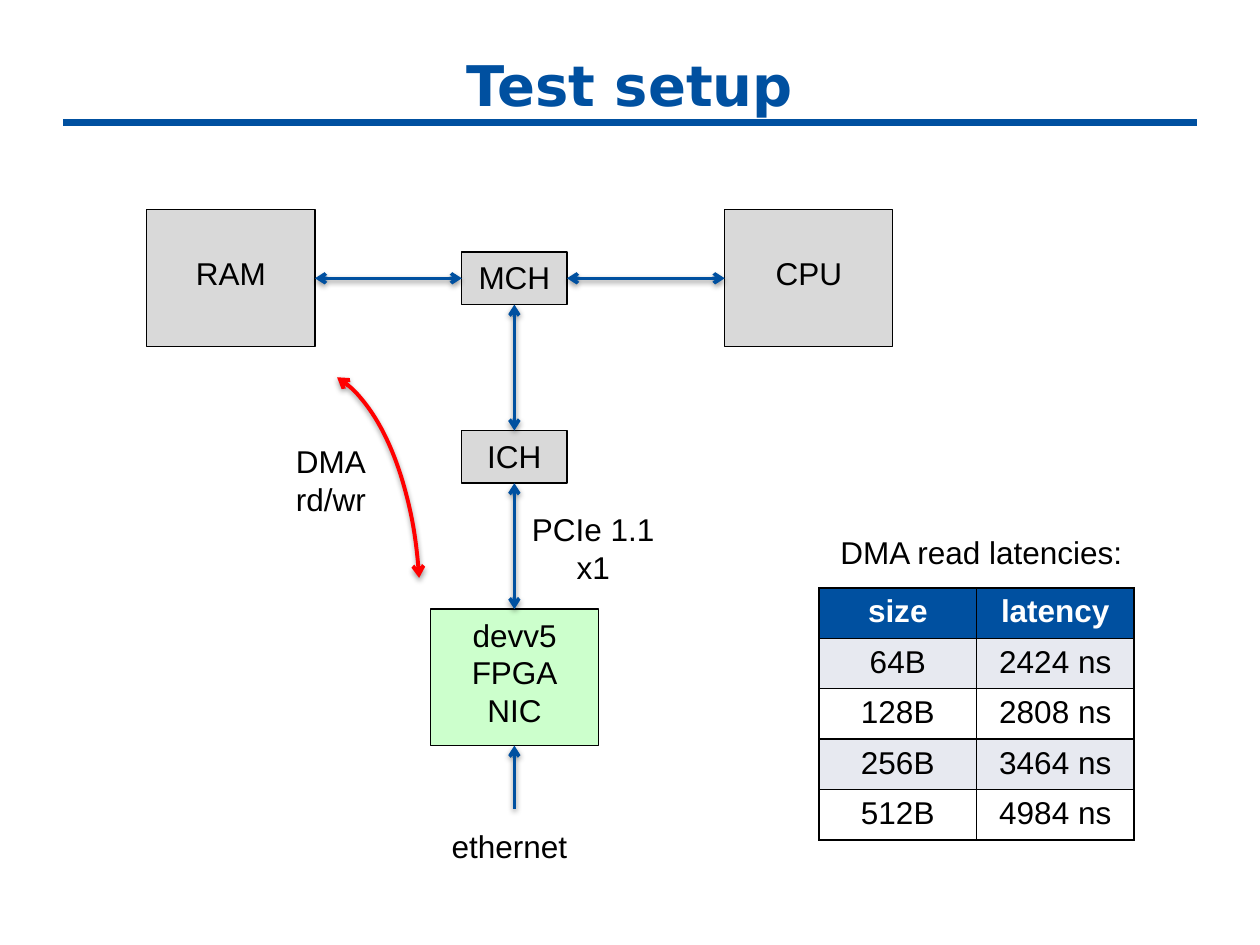
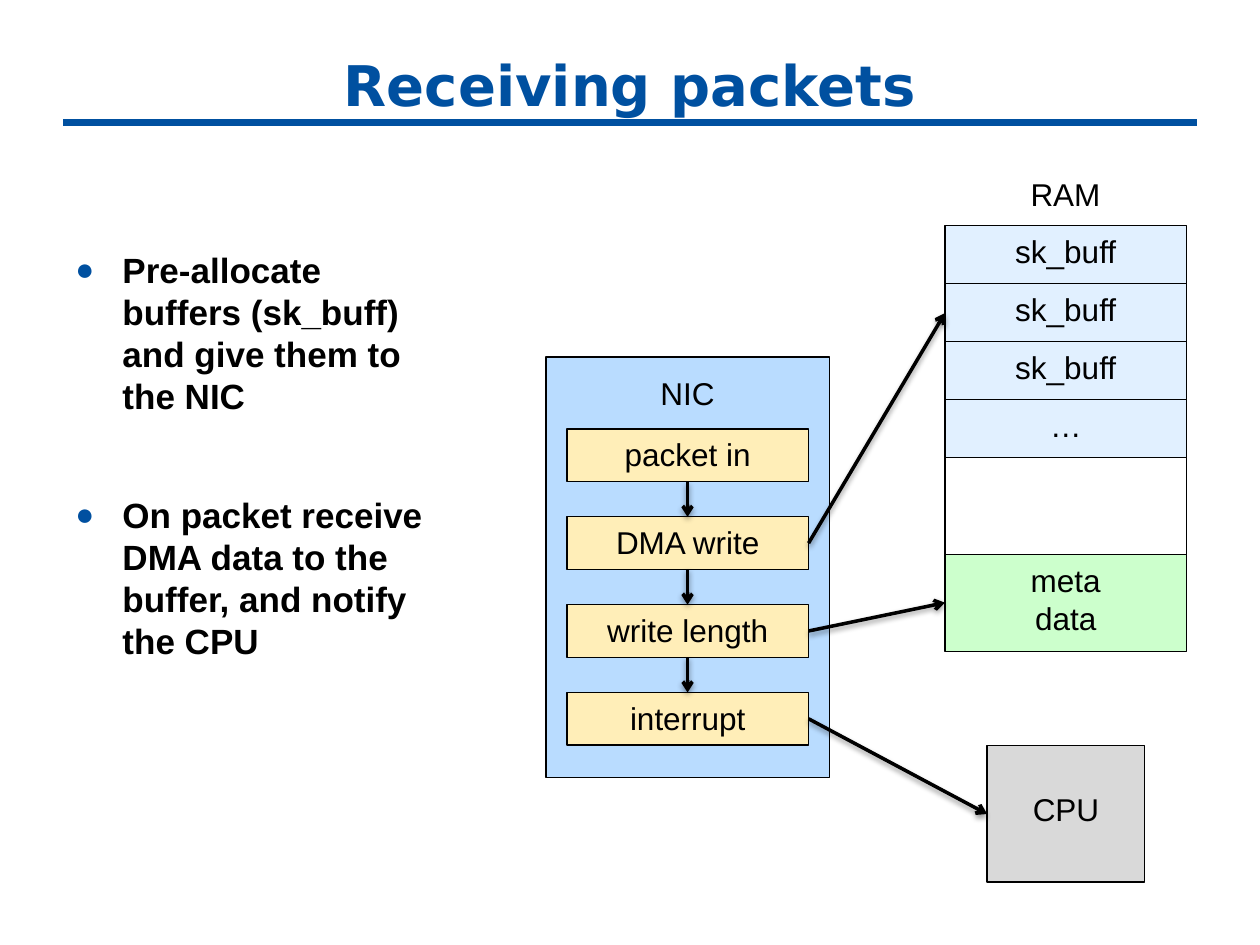
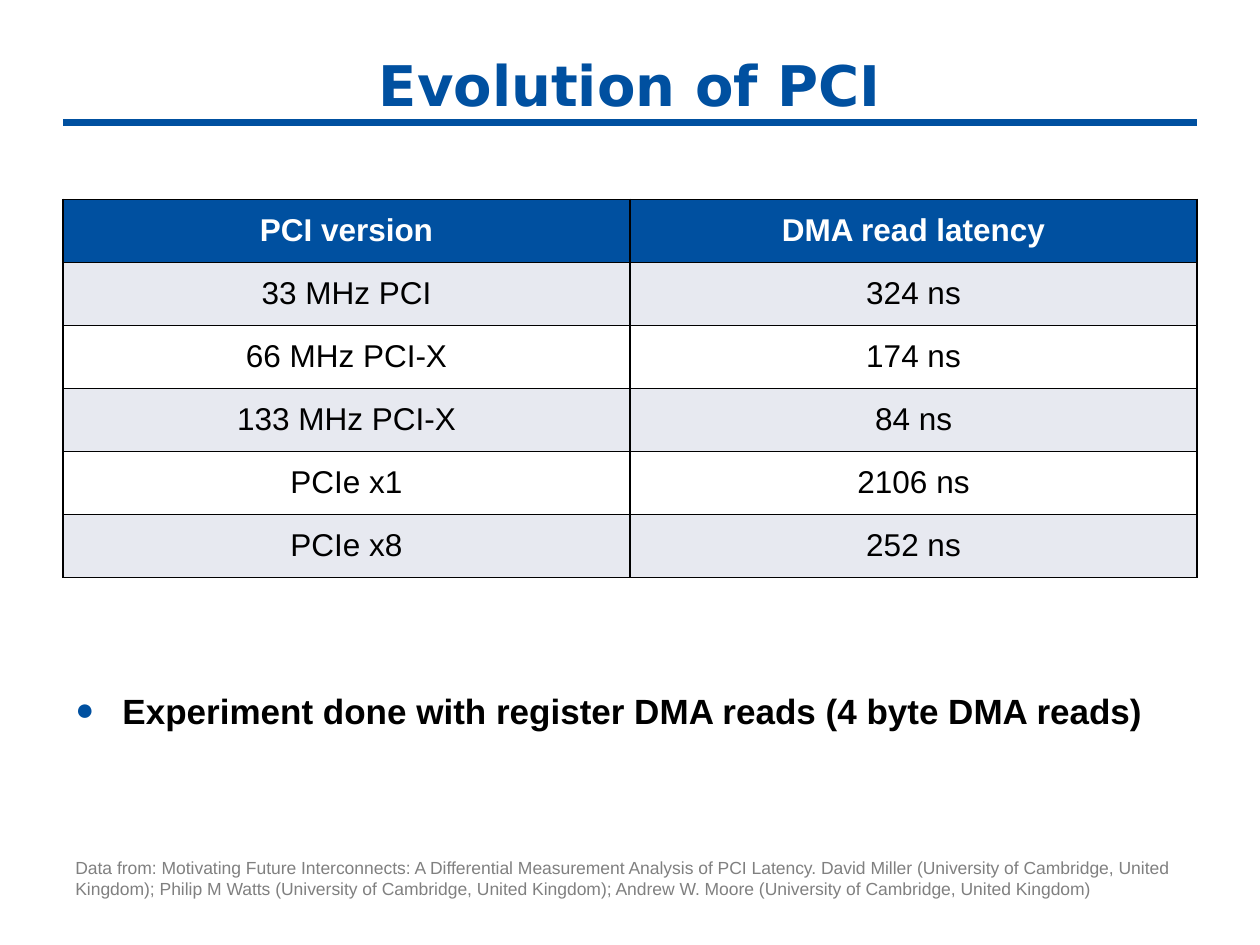
from lxml import etree
from pptx import Presentation
from pptx.dml.color import RGBColor
from pptx.enum.shapes import MSO_CONNECTOR, MSO_SHAPE
from pptx.enum.text import MSO_ANCHOR, MSO_AUTO_SIZE, PP_ALIGN
from pptx.oxml import parse_xml
from pptx.oxml.ns import nsdecls, qn
from pptx.util import Cm, Pt

RECT, ARC, LINE = MSO_SHAPE.RECTANGLE, MSO_SHAPE.ARC, MSO_CONNECTOR.STRAIGHT
LEFT, MID = PP_ALIGN.LEFT, PP_ALIGN.CENTER
TOP, HALF = MSO_ANCHOR.TOP, MSO_ANCHOR.MIDDLE
FIXED = MSO_AUTO_SIZE.NONE
color = RGBColor.from_string
BLUE, BLACK, WHITE, RED = "0050A0", "000000", "FFFFFF", "FF0000"
GRAY, GREEN, PALE, SKY, SAND = "D9D9D9", "CCFFCC", "E1F0FF", "B9DCFF", "FFEEB8"
BAND, DIM = "E7E9F0", "808080"
FONT, HEAD = "Arial", "DejaVu Sans"
SHADE = (
    f'<a:effectLst {nsdecls("a")}><a:outerShdw blurRad="40000" dist="20000" dir="5400000" '
    'rotWithShape="0"><a:srgbClr val="000000"><a:alpha val="38000"/></a:srgbClr>'
    '</a:outerShdw></a:effectLst>'
)


def box(page, text, x, y, w, h, fill=None, top=0.13):
    place = Cm(x), Cm(y), Cm(w), Cm(h)
    if fill:
        part = page.shapes.add_shape(RECT, *place)
        part.shadow.inherit = False
        part.fill.solid()
        part.fill.fore_color.rgb = color(fill)
        part.line.color.rgb = color(BLACK)
        part.line.width = Pt(0.75)
    else:
        part = page.shapes.add_textbox(*place)
    frame = part.text_frame
    frame.word_wrap = True
    frame.vertical_anchor = TOP
    frame.margin_top = Cm(top)
    frame.text = text
    for para in frame.paragraphs:
        para.alignment = MID
        para.font.name = FONT
        para.font.size = Pt(18)
        para.font.color.rgb = color(BLACK)
    return part


def point(part, tone, ends, width=2):
    part.line.color.rgb = color(tone)
    part.line.width = Pt(width)
    props = part.element.spPr
    for end in ends:
        etree.SubElement(props.find(qn("a:ln")), qn(f"a:{end}"), type="arrow")
    props.append(parse_xml(SHADE))


deck = Presentation()
deck.slide_width, deck.slide_height = Cm(25.4), Cm(19.05)
plain = deck.slide_layouts[5]

pages = []
for name in ("Test setup", "Receiving packets", "Evolution of PCI"):
    page = deck.slides.add_slide(plain)
    title = page.shapes.title
    title.left, title.top, title.width, title.height = Cm(1.27), Cm(0.85), Cm(22.86), Cm(1.69)
    frame = title.text_frame
    frame.text = name
    frame.auto_size = FIXED
    frame.vertical_anchor = HALF
    para = frame.paragraphs[0]
    para.alignment = MID
    para.font.name = HEAD
    para.font.size = Pt(32)
    para.font.bold = True
    para.font.color.rgb = color(BLUE)
    pages.append(page)
setup, flow, trend = pages

rule = setup.shapes.add_connector(LINE, Cm(1.27), Cm(2.47), Cm(24.13), Cm(2.47))
rule.line.color.rgb = color(BLUE)
rule.line.width = Pt(4)
etree.SubElement(rule.element.spPr, qn("a:effectLst"))
plain.shapes.element.append(rule.element)

box(setup, "devv5\nFPGA\nNIC", 8.68, 12.28, 3.39, 2.75, GREEN)
for name, y in (("ICH", 8.68), ("MCH", 5.08)):
    box(setup, name, 9.31, y, 2.12, 1.06, GRAY)
for name, x in (("CPU", 14.61), ("RAM", 2.96)):
    box(setup, name, x, 4.23, 3.39, 2.75, GRAY, 0.9)
for text, x, y, w, h in (
    ("ethernet", 8.68, 16.54, 3.18, 1.02),
    ("PCIe 1.1 x1", 10.37, 10.16, 3.18, 1.8),
    ("DMA\nrd/wr", 5.08, 8.79, 3.18, 1.8),
    ("DMA read latencies:", 16.51, 10.62, 6.55, 1.02),
):
    box(setup, text, x, y, w, h)

curve = setup.shapes.add_shape(ARC, Cm(3.81), Cm(7.41), Cm(4.66), Cm(9.74))
curve.adjustments[0], curve.adjustments[1] = 166.79, 206.86
curve.fill.background()
point(curve, RED, ("headEnd", "tailEnd"), 2.25)

left, first, tall, pitch = 11.43, 8.65, 1.06, 1.77
mids = [first + i * pitch + tall / 2 for i in range(4)]
box(flow, "", 11.01, 7.2, 5.72, 8.47, SKY)
box(flow, "NIC", 11.85, 7.41, 4.02, 1.02)
for i, step in enumerate(("packet in", "DMA write", "write length", "interrupt")):
    box(flow, step, left, first + i * pitch, 4.87, tall, SAND)

box(flow, "RAM", 19.47, 3.39, 4.02, 1.02)
for i, slot in enumerate(("sk_buff", "sk_buff", "sk_buff", "…")):
    box(flow, slot, 19.05, 4.55 + i * 1.17, 4.87, 1.17, PALE)
box(flow, "", 19.05, 9.23, 4.87, 1.95, WHITE)
box(flow, "meta\ndata", 19.05, 11.18, 4.87, 1.95, GREEN)
box(flow, "CPU", 19.9, 15.03, 3.18, 2.75, GRAY, 0.9)

both, last = ("headEnd", "tailEnd"), ("tailEnd",)
links = [
    (setup, 6.35, 5.61, 9.31, 5.61, BLUE, both),
    (setup, 11.43, 5.61, 14.61, 5.61, BLUE, both),
    (setup, 10.37, 6.14, 10.37, 8.68, BLUE, both),
    (setup, 10.37, 9.74, 10.37, 12.28, BLUE, both),
    (setup, 10.37, 16.3, 10.37, 15.03, BLUE, last),
    (flow, 16.3, mids[1], 19.05, 6.31, BLACK, last),
    (flow, 16.3, mids[2], 19.05, 12.15, BLACK, last),
    (flow, 16.3, mids[3], 19.9, 16.41, BLACK, last),
]
for y in mids[:3]:
    links.append((flow, 13.86, y + tall / 2, 13.86, y - tall / 2 + pitch, BLACK, last))
for page, x1, y1, x2, y2, tone, ends in links:
    link = page.shapes.add_connector(LINE, Cm(x1), Cm(y1), Cm(x2), Cm(y2))
    point(link, tone, ends)

sizes = (
    ("size", "latency"),
    ("64B", "2424 ns"),
    ("128B", "2808 ns"),
    ("256B", "3464 ns"),
    ("512B", "4984 ns"),
)
buses = (
    ("PCI version", "DMA read latency"),
    ("33 MHz PCI", "324 ns"),
    ("66 MHz PCI-X", "174 ns"),
    ("133 MHz PCI-X", "84 ns"),
    ("PCIe x1", "2106 ns"),
    ("PCIe x8", "252 ns"),
)
for page, rows, x, y, w, h, anchor in (
    (setup, sizes, 16.51, 11.85, 6.35, 5.08, TOP),
    (trend, buses, 1.27, 4.02, 22.86, 7.62, HALF),
):
    grid = page.shapes.add_table(len(rows), 2, Cm(x), Cm(y), Cm(w), Cm(h)).table
    for r, row in enumerate(rows):
        for c, text in enumerate(row):
            cell = grid.cell(r, c)
            cell.text = text
            cell.vertical_anchor = anchor
            props = cell._tc.get_or_add_tcPr()
            for side in "LRTB":
                edge = etree.SubElement(props, qn(f"a:ln{side}"), w="12700")
                paint = etree.SubElement(edge, qn("a:solidFill"))
                etree.SubElement(paint, qn("a:srgbClr"), val=BLACK)
            cell.fill.solid()
            cell.fill.fore_color.rgb = color(BLUE if r == 0 else BAND if r % 2 else WHITE)
            para = cell.text_frame.paragraphs[0]
            para.alignment = MID
            para.font.name = FONT
            para.font.size = Pt(18)
            para.font.bold = r == 0
            para.font.color.rgb = color(BLACK if r else WHITE)

advice = (
    "Pre-allocate buffers (sk_buff) and give them to the NIC\n"
    "On packet receive DMA data to the buffer, and notify the CPU"
)
remark = "Experiment done with register DMA reads (4 byte DMA reads)"
for page, text, y, w, h in ((flow, advice, 4.88, 7.83, 12.07), (trend, remark, 13.76, 22.86, 1.91)):
    body = box(page, text, 1.27, y, w, h)
    for i, para in enumerate(body.text_frame.paragraphs):
        para.alignment = LEFT
        para.font.size = Pt(20)
        para.font.bold = True
        para.space_before = Pt(44 * i)
        props = para._p.get_or_add_pPr()
        props.set("marL", str(Cm(0.95)))
        props.set("indent", str(-Cm(0.95)))
        tint = etree.SubElement(props, qn("a:buClr"))
        etree.SubElement(tint, qn("a:srgbClr"), val=BLUE)
        etree.SubElement(props, qn("a:buSzPct"), val="90000")
        etree.SubElement(props, qn("a:buFont"), typeface=FONT)
        etree.SubElement(props, qn("a:buChar"), char="●")
        props.append(props.find(qn("a:defRPr")))

credit = (
    "Data from: Motivating Future Interconnects: A Differential Measurement Analysis of PCI Latency. "
    "David Miller (University of Cambridge, United Kingdom); Philip M Watts (University of Cambridge, "
    "United Kingdom); Andrew W. Moore (University of Cambridge, United Kingdom)"
)
para = box(trend, credit, 1.27, 17.15, 22.86, 1.52).text_frame.paragraphs[0]
para.alignment = LEFT
para.font.size = Pt(10)
para.font.color.rgb = color(DIM)

deck.save("out.pptx")
